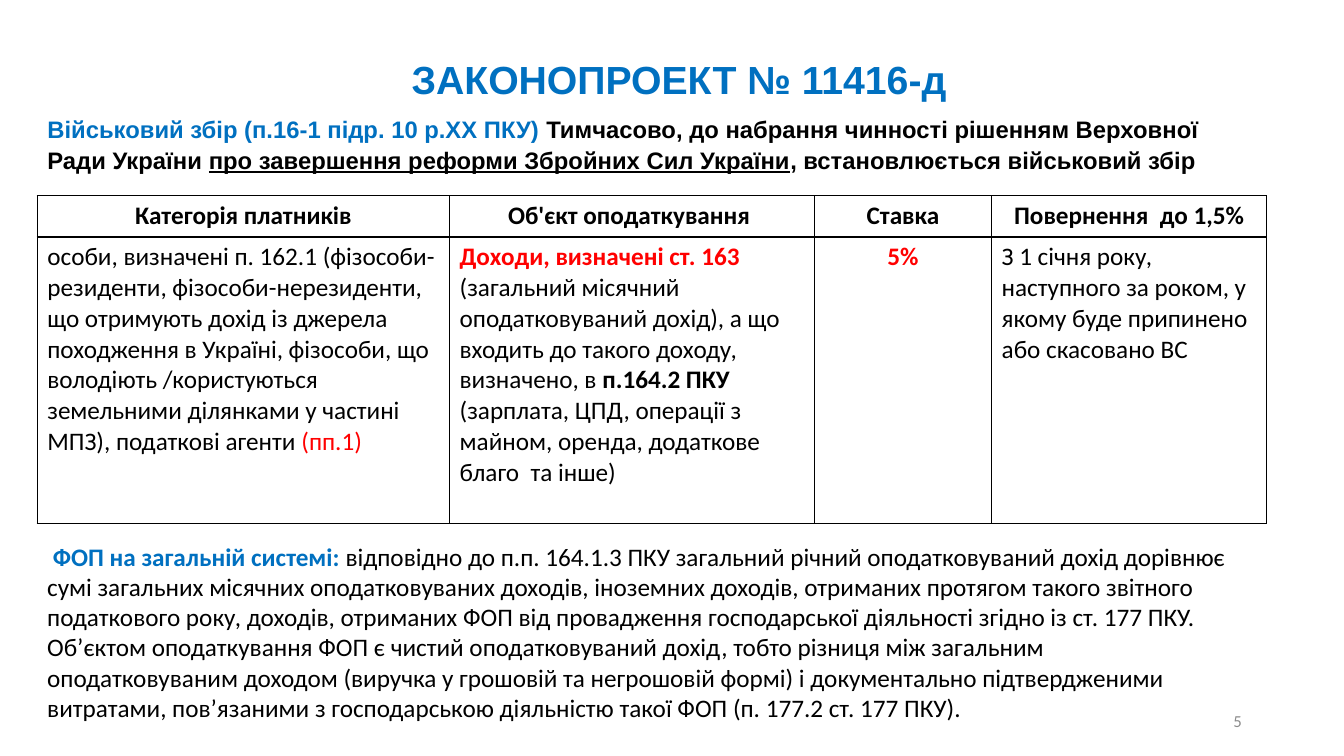
from lxml import etree
from pptx import Presentation
from pptx import util as u
from pptx.dml import color
from pptx.enum import text
from pptx.oxml import ns

Cm, Pt = u.Cm, u.Pt
COLORS = {"blue": "0070C0", "black": "000000", "red": "FF0000", "gray": "8C8C8C"}


def write(para, spans, font, size, align=text.PP_ALIGN.LEFT):
    para.alignment = align
    para.font.name = font
    para.font.size = Pt(size)
    for words, shade, bold in spans:
        span = para.add_run()
        span.text = words
        span.font.bold = bold
        span.font.color.rgb = color.RGBColor.from_string(COLORS[shade])


def place(box, left, top, width, height):
    box.left, box.top, box.width, box.height = Cm(left), Cm(top), Cm(width), Cm(height)
    box.text_frame.word_wrap = True
    box.text_frame.auto_size = text.MSO_AUTO_SIZE.NONE


deck = Presentation()
deck.slide_width, deck.slide_height = Cm(33.87), Cm(19.05)
page = deck.slides.add_slide(deck.slide_layouts[1])

title = page.shapes.title
place(title, 0, 1.12, 33.87, 1.7)
frame = title.text_frame
frame.margin_left = frame.margin_right = Cm(0.18)
frame.margin_top = frame.margin_bottom = Cm(0.08)
frame.vertical_anchor = text.MSO_ANCHOR.MIDDLE
para = frame.paragraphs[0]
para.line_spacing = 0.9
write(para, [(" ", "blue", True), ("ЗАКОНОПРОЕКТ № 11416-д", "blue", True)],
      "Arial", 28, text.PP_ALIGN.CENTER)
para.runs[0].font.size = Pt(36)

body = page.placeholders[1]
place(body, 0.94, 2.72, 30.73, 2)
para = body.text_frame.paragraphs[0]
para.space_before, para.space_after, para.line_spacing = Pt(0), Pt(6), 1.07
write(para, [
    ("Військовий збір (п.16-1 підр. 10 р.ХХ ПКУ) ", "blue", True),
    ("Тимчасово, до набрання чинності рішенням Верховної Ради України ", "black", True),
    ("про завершення реформи Збройних Сил України", "black", True),
    (", встановлюється військовий збір", "black", True),
], "Arial", 17)
para.runs[2].font.underline = True
props = para._p.get_or_add_pPr()
props.set("marL", "0")
props.set("indent", "0")
props.insert_element_before(
    etree.Element(ns.qn("a:buNone")), "a:tabLst", "a:defRPr", "a:extLst")

headers = ["Категорія платників", "Об'єкт оподаткування ", "Ставка", "Повернення  до 1,5%"]
details = [
    [("особи, визначені п. 162.1 (фізособи-резиденти, фізособи-нерезиденти, що отримують "
      "дохід із джерела походження в Україні, фізособи, що володіють /користуються "
      "земельними ділянками у частині МПЗ), податкові агенти ", "black", False),
     ("(пп.1)", "red", False)],
    [("Доходи, визначені ст. 163 ", "red", True),
     ("(загальний місячний оподатковуваний дохід), а що входить до такого доходу, "
      "визначено, в ", "black", False),
     ("п.164.2 ПКУ ", "black", True),
     ("(зарплата, ЦПД, операції з майном, оренда, додаткове благо  та інше)", "black", False)],
    [("5%", "red", True)],
    [("З 1 січня року, наступного за роком, у якому буде припинено або скасовано ВС",
      "black", False)],
]
rows = [[[(header, "black", True)] for header in headers], details]
widths, heights = [10.39, 9.19, 4.47, 6.93], [1.04, 7.22]
table = page.shapes.add_table(2, 4, Cm(0.94), Cm(4.93), Cm(sum(widths)), Cm(sum(heights))).table
table.first_row = table.horz_banding = False
for column, width in zip(table.columns, widths):
    column.width = Cm(width)
for r, (row, height) in enumerate(zip(rows, heights)):
    table.rows[r].height = Cm(height)
    for c, spans in enumerate(row):
        cell = table.cell(r, c)
        centred = r == 0 or c == 2
        write(cell.text_frame.paragraphs[0], spans, "Calibri", 18,
              text.PP_ALIGN.CENTER if centred else text.PP_ALIGN.LEFT)
        borders = cell._tc.get_or_add_tcPr()
        for side in ("lnL", "lnR", "lnT", "lnB"):
            line = etree.SubElement(borders, ns.qn("a:" + side), w=str(Pt(1)))
            fill = etree.SubElement(line, ns.qn("a:solidFill"))
            etree.SubElement(fill, ns.qn("a:srgbClr"), val=COLORS["black"])
        cell.fill.background()

notes = [
    [(" ", "black", False),
     ("ФОП на загальній системі: ", "blue", True),
     ("відповідно до п.п. 164.1.3 ПКУ загальний річний оподатковуваний дохід дорівнює сумі "
      "загальних місячних оподатковуваних доходів, іноземних доходів, отриманих протягом "
      "такого звітного податкового року, доходів, отриманих ФОП від провадження "
      "господарської діяльності згідно із ст. 177 ПКУ.", "black", False)],
    [("Об’єктом оподаткування ФОП є чистий оподатковуваний дохід, тобто різниця між "
      "загальним оподатковуваним доходом (виручка у грошовій та негрошовій формі) і "
      "документально підтвердженими витратами, пов’язаними з господарською діяльністю "
      "такої ФОП (п. 177.2 ст. 177 ПКУ).", "black", False)],
]
box = page.shapes.add_textbox(0, 0, 0, 0)
place(box, 0.94, 13.51, 30.4, 4.88)
for i, spans in enumerate(notes):
    para = box.text_frame.add_paragraph() if i else box.text_frame.paragraphs[0]
    write(para, spans, "Calibri", 18)

number = page.shapes.add_textbox(0, 0, 0, 0)
place(number, 23.93, 17.65, 7.62, 1.02)
number.text_frame.vertical_anchor = text.MSO_ANCHOR.MIDDLE
write(number.text_frame.paragraphs[0], [("5", "gray", False)], "Calibri", 12, text.PP_ALIGN.RIGHT)

deck.save("out.pptx")
